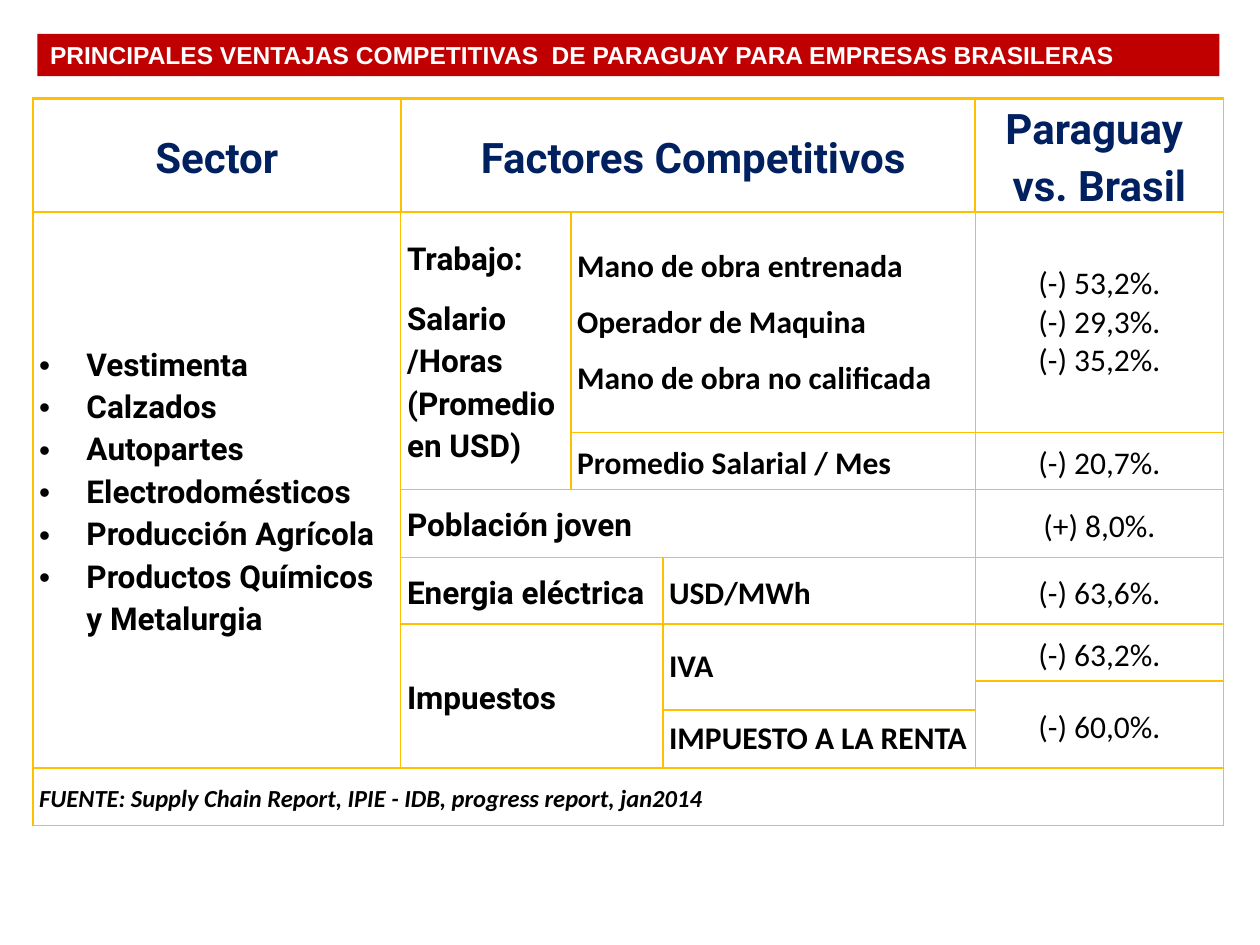
from dataclasses import dataclass

from lxml.etree import SubElement
from pptx import Presentation
from pptx.dml.color import RGBColor
from pptx.enum.text import MSO_ANCHOR, MSO_AUTO_SIZE, PP_ALIGN
from pptx.oxml.ns import qn
from pptx.util import Pt


@dataclass(frozen=True)
class Theme:
    """Colours, fonts and type sizes of the slide."""
    banner: RGBColor = RGBColor(0xC0, 0x00, 0x00)
    banner_text: RGBColor = RGBColor(0xFF, 0xFF, 0xFF)
    heading: RGBColor = RGBColor(0x00, 0x20, 0x60)
    body: RGBColor = RGBColor(0x00, 0x00, 0x00)
    grid: RGBColor = RGBColor(0xFF, 0xC0, 0x00)
    banner_font: str = "Arial"
    label_font: str = "Roboto"
    detail_font: str = "Calibri"
    heading_size: int = 24
    body_size: int = 18
    small_size: int = 14
    thin: float = 1
    thick: float = 1.5


@dataclass(frozen=True)
class Style:
    """Look of the paragraphs in one kind of cell."""
    font: str = Theme.detail_font
    size: int = Theme.body_size
    color: RGBColor = Theme.body
    bold: bool = True
    italic: bool = False
    align: PP_ALIGN = PP_ALIGN.LEFT
    spacing: float = 1.15
    after: float = 0
    hanging: float = 0
    bullet: str = ""


HEADING = Style(font=Theme.label_font, size=Theme.heading_size,
                color=Theme.heading, align=PP_ALIGN.CENTER)
SECTOR = Style(font=Theme.label_font, hanging=27, bullet="•")
FACTOR = Style(font=Theme.label_font, after=10)
DETAIL = Style(after=10)
WORKERS = Style(spacing=1, after=10)
TAX = Style(spacing=1)
RATE = Style(bold=False, align=PP_ALIGN.CENTER, hanging=27)
WORKER_RATES = Style(bold=False, align=PP_ALIGN.CENTER, spacing=1, hanging=27)
SOURCE = Style(size=Theme.small_size, italic=True, hanging=27)

COLUMNS = [210.2, 97.2, 52.6, 178.6, 141.8]
ROWS = [65, 126, 32.4, 38.9, 38.2, 32.4, 16.6, 33.1, 33.1]
THICK_BELOW = {0, 7}

CELLS = [
    (0, 0, 1, 1, HEADING, ["Sector"]),
    (0, 1, 1, 3, HEADING, [" Factores Competitivos"]),
    (0, 4, 1, 1, HEADING, ["Paraguay ", "vs. Brasil"]),
    (1, 0, 7, 1, SECTOR, ["Vestimenta", "Calzados", "Autopartes", "Electrodomésticos",
                          "Producción Agrícola", "Productos Químicos y Metalurgia"]),
    (1, 1, 2, 1, FACTOR, ["Trabajo:", "Salario /Horas (Promedio en USD)"]),
    (1, 2, 1, 2, WORKERS, ["Mano de obra entrenada", "Operador de Maquina",
                           "Mano de obra no calificada"]),
    (1, 4, 1, 1, WORKER_RATES, ["(-) 53,2%.", "(-) 29,3%.", "(-) 35,2%."]),
    (2, 2, 1, 2, DETAIL, ["Promedio Salarial / Mes"]),
    (2, 4, 1, 1, RATE, ["(-) 20,7%."]),
    (3, 1, 1, 3, FACTOR, ["Población joven"]),
    (3, 4, 1, 1, RATE, ["(+) 8,0%."]),
    (4, 1, 1, 2, FACTOR, ["Energia eléctrica"]),
    (4, 3, 1, 1, DETAIL, ["USD/MWh"]),
    (4, 4, 1, 1, RATE, ["(-) 63,6%."]),
    (5, 1, 3, 2, FACTOR, ["Impuestos"]),
    (5, 3, 2, 1, TAX, ["IVA"]),
    (5, 4, 1, 1, RATE, ["(-) 63,2%."]),
    (6, 4, 2, 1, RATE, ["(-) 60,0%."]),
    (7, 3, 1, 1, TAX, ["IMPUESTO A LA RENTA"]),
    (8, 0, 1, 5, SOURCE, ["FUENTE: Supply Chain Report, IPIE - IDB, progress report, jan2014"]),
]


def format_paragraph(paragraph, style):
    """Apply a style to one paragraph."""
    paragraph.alignment = style.align
    paragraph.line_spacing = style.spacing
    paragraph.space_before = Pt(0)
    paragraph.space_after = Pt(style.after)
    properties = paragraph._p.get_or_add_pPr()
    properties.set("marL", str(Pt(style.hanging)))
    properties.set("indent", str(-Pt(style.hanging)))
    if style.bullet:
        SubElement(properties, qn("a:buFont")).set("typeface", "Arial")
        SubElement(properties, qn("a:buChar")).set("char", style.bullet)
    font = paragraph.font
    font.name, font.size = style.font, Pt(style.size)
    font.bold, font.italic = style.bold, style.italic
    font.color.rgb = style.color


def write_cell(cell, style, lines):
    """Fill a cell with one styled paragraph per line."""
    cell.text = "\n".join(lines)
    for paragraph in cell.text_frame.paragraphs:
        format_paragraph(paragraph, style)


def draw_borders(cell, row, column):
    """Rule the four sides of a cell, heavier around the headings."""
    last = len(COLUMNS) - 1
    heavy = {
        "L": row == 0 and column > 0,
        "R": row == 0 and column < last,
        "T": row == 0 or row - 1 in THICK_BELOW,
        "B": row in THICK_BELOW,
    }
    properties = cell._tc.get_or_add_tcPr()
    for side, is_heavy in heavy.items():
        width = Theme.thick if is_heavy else Theme.thin
        line = SubElement(properties, qn(f"a:ln{side}"), w=str(Pt(width)))
        fill = SubElement(line, qn("a:solidFill"))
        SubElement(fill, qn("a:srgbClr"), val=str(Theme.grid))


def add_banner(slide, left, top, width, height):
    """Place the title as a filled band."""
    title = slide.shapes.title
    title.left, title.top, title.width, title.height = map(Pt, (left, top, width, height))
    title.fill.solid()
    title.fill.fore_color.rgb = Theme.banner
    frame = title.text_frame
    frame.text = "PRINCIPALES VENTAJAS COMPETITIVAS  DE PARAGUAY PARA EMPRESAS BRASILERAS"
    frame.auto_size = MSO_AUTO_SIZE.NONE
    frame.word_wrap = True
    frame.vertical_anchor = MSO_ANCHOR.MIDDLE
    format_paragraph(frame.paragraphs[0], Style(
        font=Theme.banner_font, size=Theme.small_size,
        color=Theme.banner_text, spacing=1))


def add_comparison(slide, left, top, width, height):
    """Place the comparison table, scaled to its box."""
    table = slide.shapes.add_table(
        len(ROWS), len(COLUMNS), Pt(left), Pt(top), Pt(width), Pt(height)).table
    table.first_row = table.horz_banding = False
    for column, share in zip(table.columns, COLUMNS):
        column.width = Pt(width * share / sum(COLUMNS))
    for row, share in zip(table.rows, ROWS):
        row.height = Pt(height * share / sum(ROWS))
    for row in range(len(ROWS)):
        for column in range(len(COLUMNS)):
            cell = table.cell(row, column)
            cell.margin_left = cell.margin_right = Pt(3.6)
            cell.margin_top = cell.margin_bottom = Pt(0)
            cell.vertical_anchor = MSO_ANCHOR.MIDDLE
            draw_borders(cell, row, column)
            cell.fill.background()
    for row, column, height_span, width_span, style, lines in CELLS:
        cell = table.cell(row, column)
        if height_span * width_span > 1:
            cell.merge(table.cell(row + height_span - 1, column + width_span - 1))
        write_cell(cell, style, lines)


def main():
    """Build and save the slide."""
    presentation = Presentation()
    presentation.slide_width, presentation.slide_height = Pt(720), Pt(540)
    slide = presentation.slides.add_slide(presentation.slide_layouts[5])
    add_comparison(slide, 18.8, 56.2, sum(COLUMNS), sum(ROWS))
    add_banner(slide, 21.4, 19.4, 675.4, 24.2)
    presentation.save("out.pptx")


if __name__ == "__main__":
    main()
